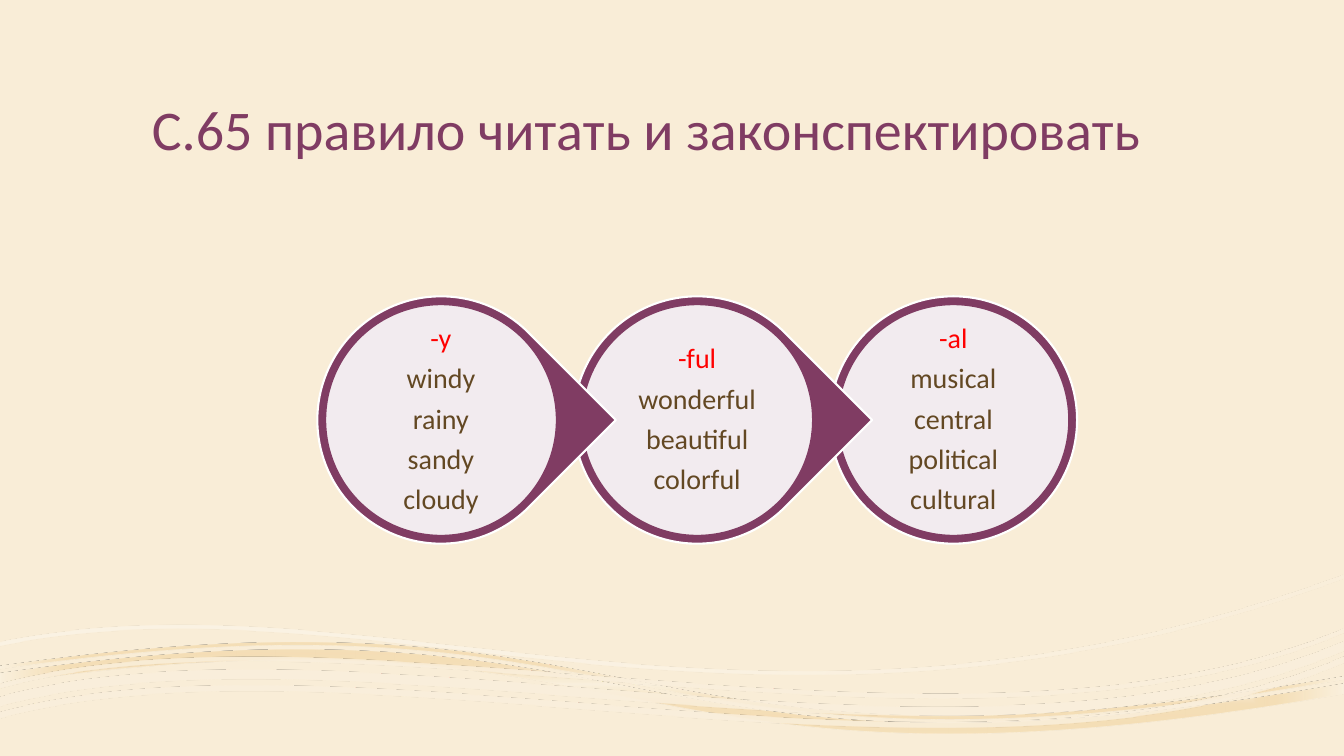
import math
from dataclasses import dataclass
from typing import Any

from lxml import etree
from pptx import Presentation, util as u
from pptx.dml.color import RGBColor
from pptx.enum import shapes, text
from pptx.oxml.ns import qn

COLS, ROWS = 160, 90
WIDTH, HEIGHT = u.Inches(13.333), u.Inches(7.5)
FONT = "Calibri"
PLUM, RED, BROWN, WHITE = "803C63", "FF0000", "634823", "FFFFFF"
TILT = 3.5
Point = tuple[float, float]
Box = tuple[float, float, float, float]


@dataclass(frozen=True)
class Wave:
    frame: Box
    upper: list[Point]
    lower: list[Point]
    strips: list[tuple[float, float]]
    stops: list[tuple[int, str, int]]
    shade: str
    focus: dict[str, int]


@dataclass(frozen=True)
class Suffix:
    ending: str
    words: list[str]
    preset: shapes.MSO_SHAPE
    turn: float


CREST = [(0, 84.7), (41.9, 73.4), (114.6, 97.2), (160, 78.2)]
SWELL = [(0, 76.4), (44.8, 67.1), (90.5, 94.1), (160, 68.4)]
WAVES = [
    Wave((0.1, 73.4, 159.7, 16.2),
         [(0, 80.2), (14.9, 78.1), (26.6, 77.3), (36.7, 77.4),
          (80.4, 77.6), (88.6, 93.8), (160, 81.4)],
         [(0, 81.4), (80, 70), (72.2, 97.9), (160, 82.6)],
         [(0, 0), (-0.85, -1.7)],
         [(0, "FAF1DF", 90), (18, "F4DEB7", 100), (37, "F4DDB3", 90), (100, "FAF1DF", 100)],
         "shape", dict(l=50, t=50, r=50, b=50)),
    Wave((0.4, 70.6, 160.2, 20.5), SWELL, SWELL, [(0, 0.45)],
         [(36, "FFFFFF", 30), (100, "F9EDD7", 48)], "", {}),
    Wave((-0.1, 75, 160.3, 13.8), CREST, CREST, [(0, 0.7), (-1.8, -0.7), (-3.3, -2.8)],
         [(36, "FFFFFF", 47), (100, "FAEFDC", 82)],
         "rect", dict(l=100, t=100)),
]
SUFFIXES = [
    Suffix("-y", ["windy", "rainy", "sandy", "cloudy"], shapes.MSO_SHAPE.TEAR, 45),
    Suffix("-ful", ["wonderful", "beautiful", "colorful"], shapes.MSO_SHAPE.TEAR, 45),
    Suffix("-al", ["musical", "central", "political", "cultural"], shapes.MSO_SHAPE.OVAL, 0),
]
FIRST_X, PITCH, MIDDLE_Y = 52.5, 30.5, 50
DISC, FACE, LABEL = 29.45, 27.5, 19.7


def col(n: float) -> int:
    return round(WIDTH * n / COLS)


def row(n: float) -> int:
    return round(HEIGHT * n / ROWS)


def rgb(value: str) -> RGBColor:
    return RGBColor.from_string(value)


def apply(target: Any, **values: Any) -> None:
    for name, value in values.items():
        setattr(target, name, value)


def add_alpha(clr: Any, percent: int) -> None:
    etree.SubElement(clr, qn("a:alpha"), val=str(percent * 1000))


def level(curve: list[Point], dy: float, frame: Box) -> list[tuple[int, int]]:
    left, top, width, height = frame
    cx, cy = left + width / 2, top + height / 2
    cos, sin = math.cos(math.radians(TILT)), math.sin(math.radians(TILT))
    return [(col(cx + (x - cx) * cos - (y + dy - cy) * sin),
             row(cy + (x - cx) * sin + (y + dy - cy) * cos)) for x, y in curve]


def bend(outline: Any, corner: int) -> None:
    count, curve = 0, None
    for step in list(outline):
        if step.tag == qn("a:moveTo"):
            count = 0
        elif step.tag == qn("a:lnTo"):
            count += 1
            if count == corner:
                continue
            if count % corner % 3 == 1:
                curve = etree.Element(qn("a:cubicBezTo"))
                step.addprevious(curve)
            curve.append(step[0])
            outline.remove(step)


def set_frame(sp: Any, outline: Any, frame: Box) -> None:
    left, top, width, height = col(frame[0]), row(frame[1]), col(frame[2]), row(frame[3])
    dx, dy = sp.left - left, sp.top - top
    for pt in outline.iter(qn("a:pt")):
        pt.set("x", str(int(pt.get("x")) + dx))
        pt.set("y", str(int(pt.get("y")) + dy))
    outline.set("w", str(width))
    outline.set("h", str(height))
    apply(sp, left=left, top=top, width=width, height=height, rotation=360 - TILT)


def fill_gradient(sp: Any, wave: Wave) -> None:
    sp.fill.gradient()
    grad = sp._element.spPr.find(qn("a:gradFill"))
    for child in list(grad):
        grad.remove(child)
    stops = etree.SubElement(grad, qn("a:gsLst"))
    for position, value, alpha in wave.stops:
        stop = etree.SubElement(stops, qn("a:gs"), pos=str(position * 1000))
        add_alpha(etree.SubElement(stop, qn("a:srgbClr"), val=value), alpha)
    if wave.shade:
        shade = etree.SubElement(grad, qn("a:path"), {"path": wave.shade})
        etree.SubElement(shade, qn("a:fillToRect"),
                         {side: str(n * 1000) for side, n in wave.focus.items()})
    else:
        etree.SubElement(grad, qn("a:lin"), ang=str(45 * 60000), scaled="0")


def draw_wave(s: Any, wave: Wave) -> None:
    outlines = [level(wave.upper, up, wave.frame) + level(wave.lower, down, wave.frame)[::-1]
                for up, down in wave.strips]
    builder = s.shapes.build_freeform(*outlines[0][0])
    for i, outline in enumerate(outlines):
        if i:
            builder.move_to(*outline[0])
        builder.add_line_segments(outline[1:], close=True)
    sp = builder.convert_to_shape()
    outline = next(sp._element.spPr.iter(qn("a:path")))
    bend(outline, len(wave.upper))
    set_frame(sp, outline, wave.frame)
    sp.shadow.inherit = False
    sp.line.fill.background()
    fill_gradient(sp, wave)


def draw_text(s: Any, box: tuple[int, int, int, int], lines: list[tuple[str, str]],
              size: float, frame: dict[str, Any], para: dict[str, Any]) -> None:
    tf = s.shapes.add_textbox(*box).text_frame
    apply(tf, word_wrap=True, **frame)
    for i, (line, color) in enumerate(lines):
        p = tf.add_paragraph() if i else tf.paragraphs[0]
        apply(p, line_spacing=0.9, **para)
        r = p.add_run()
        r.text = line
        apply(r.font, name=FONT, size=u.Pt(size))
        r.font.color.rgb = rgb(color)


def centred(x: float, size: float) -> tuple[int, int, int, int]:
    return col(x - size / 2), row(MIDDLE_Y - size / 2), col(size), row(size)


def draw_round(s: Any, preset: shapes.MSO_SHAPE, x: float, size: float,
               fill: str, line: str, weight: float) -> Any:
    sp = s.shapes.add_shape(preset, *centred(x, size))
    sp.shadow.inherit = False
    sp.fill.solid()
    sp.fill.fore_color.rgb = rgb(fill)
    sp.line.color.rgb = rgb(line)
    sp.line.width = u.Pt(weight)
    return sp


def draw_suffix(s: Any, suffix: Suffix, x: float) -> None:
    disc = draw_round(s, suffix.preset, x, DISC, PLUM, WHITE, 1.5)
    disc.rotation = suffix.turn
    face = draw_round(s, shapes.MSO_SHAPE.OVAL, x, FACE, WHITE, PLUM, 1)
    add_alpha(face._element.spPr.find(qn("a:solidFill"))[0], 90)
    insets = {f"margin_{side}": u.Inches(0.03) for side in ("left", "right", "top", "bottom")}
    draw_text(s, centred(x, LABEL),
              [(suffix.ending, RED)] + [(word, BROWN) for word in suffix.words], 20,
              dict(vertical_anchor=text.MSO_ANCHOR.MIDDLE, **insets),
              dict(alignment=text.PP_ALIGN.CENTER, space_after=u.Pt(7)))


def main() -> None:
    prs = Presentation()
    apply(prs, slide_width=WIDTH, slide_height=HEIGHT)
    s = prs.slides.add_slide(prs.slide_layouts[6])
    s.background.fill.solid()
    s.background.fill.fore_color.rgb = rgb("F9EDD7")
    for wave in WAVES:
        draw_wave(s, wave)
    draw_text(s, (col(16.9), row(4), col(126), row(16)),
              [("С.65 правило читать и законспектировать", PLUM)], 40,
              dict(vertical_anchor=text.MSO_ANCHOR.BOTTOM), {})
    for i, suffix in reversed(list(enumerate(SUFFIXES))):
        draw_suffix(s, suffix, FIRST_X + i * PITCH)
    prs.save("out.pptx")


if __name__ == "__main__":
    main()
